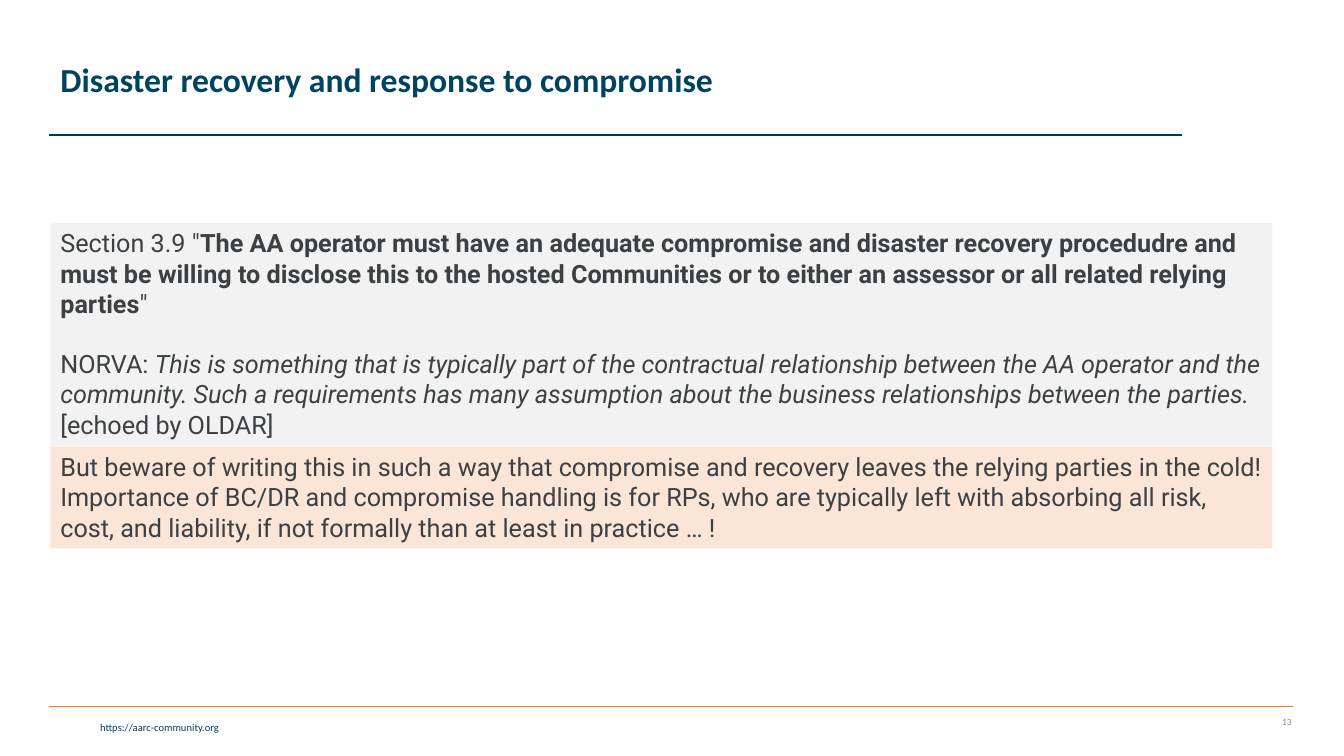
"""Build the slide on disaster recovery and response to compromise."""
from dataclasses import dataclass

from lxml.etree import SubElement
from pptx import Presentation
from pptx.dml.color import RGBColor as RGB
from pptx.enum.shapes import MSO_CONNECTOR as CONNECTOR, MSO_SHAPE as SHAPE
from pptx.enum.text import MSO_ANCHOR as ANCHOR, PP_ALIGN as ALIGN
from pptx.oxml.ns import qn
from pptx.util import Inches, Pt


@dataclass(frozen=True)
class Theme:
    """Colours, fonts and type sizes of the slide."""
    title: RGB = RGB(0x00, 0x43, 0x61)
    title_rule: RGB = RGB(0x00, 0x39, 0x59)
    footer_rule: RGB = RGB(0xF5, 0x7B, 0x20)
    link: RGB = RGB(0x00, 0x3F, 0x5E)
    number: RGB = RGB(0x8C, 0x8C, 0x8C)
    body: RGB = RGB(0x3C, 0x40, 0x43)
    grey: RGB = RGB(0xF2, 0xF2, 0xF2)
    peach: RGB = RGB(0xFB, 0xE5, 0xD6)
    head_font: str = "Calibri"
    body_font: str = "Roboto"
    title_size: float = 24
    body_size: float = 18
    link_size: float = 7.5
    number_size: float = 6.8
    paragraph_gap: float = 21.5


THEME = Theme()
LEFT = 0.5
PANEL_WIDTH = 12.12

REQUIREMENT = [
    [('Section 3.9 "', ""),
     ("The AA operator must have an adequate compromise and disaster recovery "
      "procedudre and must be willing to disclose this to the hosted Communities "
      "or to either an assessor or all related relying parties", "bold"),
     ('"', "")],
    [("NORVA: ", ""),
     ("This is something that is typically part of the contractual relationship "
      "between the AA operator and the community. Such a requirements has many "
      "assumption about the business relationships between the parties. ", "italic"),
     ("[echoed by OLDAR]", "")],
]
WARNING = [
    [("But beware of writing this in such a way that compromise and recovery "
      "leaves the relying parties in the cold!", "")],
    [("Importance of BC/DR and compromise handling is for RPs, who are typically "
      "left with absorbing all risk, cost, and liability, if not formally than at "
      "least in practice … !", "")],
]


def style(font, name, size, color):
    """Set the typeface, size and colour of a font."""
    font.name, font.size = name, Pt(size)
    font.color.rgb = color


def add_title(s, text):
    """Fill and place the title placeholder."""
    sp = s.shapes.title
    sp.left, sp.top = Inches(LEFT), Inches(0.08)
    sp.width, sp.height = Inches(10.51), Inches(1.45)
    tf = sp.text_frame
    tf.text = text
    tf.vertical_anchor = ANCHOR.MIDDLE
    p = tf.paragraphs[0]
    p.alignment, p.line_spacing = ALIGN.LEFT, 0.9
    r = p.runs[0]
    style(r.font, THEME.head_font, THEME.title_size, THEME.title)
    r.font.bold = True


def add_rule(s, y, right, color):
    """Draw a thin horizontal rule from the left margin."""
    line = s.shapes.add_connector(
        CONNECTOR.STRAIGHT, Inches(0.49), Inches(y), Inches(right), Inches(y))
    line.line.color.rgb, line.line.width = color, Pt(1)
    SubElement(line._element.spPr, qn("a:effectLst"))


def add_footer(s, text, box, size, color, anchor):
    """Add a right-aligned footer text."""
    tf = s.shapes.add_textbox(*map(Inches, box)).text_frame
    tf.word_wrap, tf.vertical_anchor = True, anchor
    tf.text = text
    p = tf.paragraphs[0]
    p.alignment = ALIGN.RIGHT
    style(p.runs[0].font, THEME.head_font, size, color)


def add_panel(s, top, height, fill, paragraphs, gap=0):
    """Add a filled panel of paragraphs made of (text, emphasis) runs."""
    sp = s.shapes.add_shape(SHAPE.RECTANGLE, Inches(LEFT), Inches(top),
                            Inches(PANEL_WIDTH), Inches(height))
    sp.shadow.inherit = False
    sp.fill.solid()
    sp.fill.fore_color.rgb = fill
    sp.line.fill.background()
    tf = sp.text_frame
    tf.word_wrap, tf.vertical_anchor = True, ANCHOR.TOP
    for i, runs in enumerate(paragraphs):
        p = tf.add_paragraph() if i else tf.paragraphs[0]
        p.alignment = ALIGN.LEFT
        p.space_before = Pt(gap if i else 0)
        for text, emphasis in runs:
            r = p.add_run()
            r.text = text
            style(r.font, THEME.body_font, THEME.body_size, THEME.body)
            r.font.bold = emphasis == "bold"
            r.font.italic = emphasis == "italic"


def main():
    """Build and save the slide."""
    prs = Presentation()
    prs.slide_width, prs.slide_height = Inches(13.33), Inches(7.5)
    s = prs.slides.add_slide(prs.slide_layouts[5])
    add_rule(s, 7.01, 12.82, THEME.footer_rule)
    add_footer(s, "https://aarc-community.org", (0.28, 7.1, 1.99, 0.23),
               THEME.link_size, THEME.link, ANCHOR.TOP)
    add_rule(s, 1.34, 11.72, THEME.title_rule)
    add_footer(s, "13", (12.1, 7.01, 0.81, 0.3),
               THEME.number_size, THEME.number, ANCHOR.MIDDLE)
    add_title(s, "Disaster recovery and response to compromise")
    add_panel(s, 2.21, 2.22, THEME.grey, REQUIREMENT, THEME.paragraph_gap)
    add_panel(s, 4.43, 1.01, THEME.peach, WARNING)
    prs.save("out.pptx")


if __name__ == "__main__":
    main()
